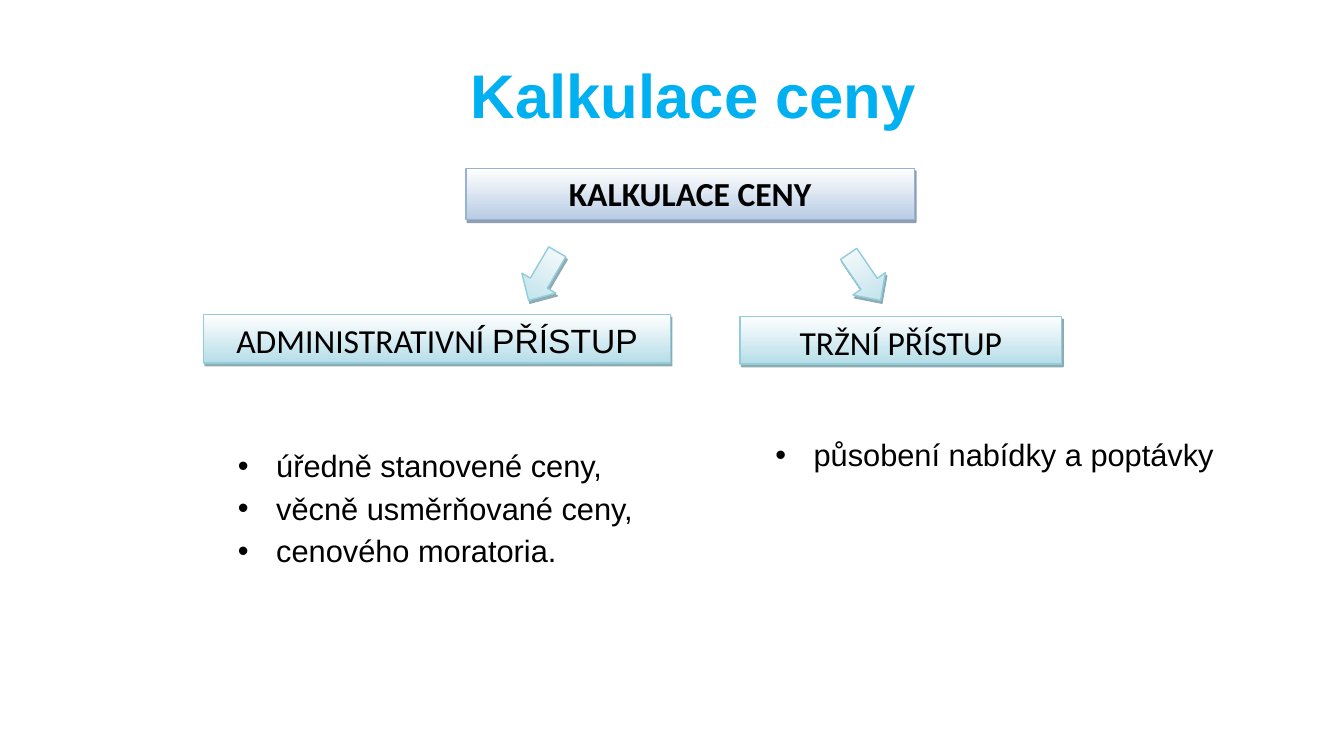
from lxml import etree
from pptx import Presentation
from pptx.dml.color import RGBColor
from pptx.enum.shapes import MSO_SHAPE
from pptx.enum.text import MSO_ANCHOR, MSO_AUTO_SIZE, PP_ALIGN
from pptx.oxml.ns import qn
from pptx.util import Inches, Pt

COLORS = {"title": "00B0F0", "text": "000000", "top": "FFFFFF"}
BLUE = {"bottom": "B8CCE4", "line": "95B3D7", "shadow": "243F60"}
TEAL = {"bottom": "B6DDE8", "line": "92CDDC", "shadow": "205867"}

TITLE_FONT = {"name": "Arial", "size": Pt(44), "bold": True}
LIST_FONT = {"name": "Arial", "size": Pt(22), "bold": False}
BOX_FONT = {"name": "Calibri", "size": Pt(24), "bold": False}


def rgb(value):
    return RGBColor.from_string(value)


def set_font(font, values, color="text"):
    for name, value in values.items():
        setattr(font, name, value)
    font.color.rgb = rgb(COLORS[color])


def place(shape, bounds):
    for name, value in zip(("left", "top", "width", "height"), bounds):
        setattr(shape, name, Inches(value))


def set_title(slide, text, bounds):
    title = slide.shapes.title
    place(title, bounds)
    frame = title.text_frame
    frame.word_wrap = True
    frame.vertical_anchor = MSO_ANCHOR.MIDDLE
    frame.text = text
    paragraph = frame.paragraphs[0]
    paragraph.alignment = PP_ALIGN.LEFT
    paragraph.line_spacing = 0.9
    set_font(paragraph.runs[0].font, TITLE_FONT, "title")


def fill_list(placeholder, items, bounds):
    place(placeholder, bounds)
    frame = placeholder.text_frame
    frame.word_wrap = True
    frame.auto_size = MSO_AUTO_SIZE.SHAPE_TO_FIT_TEXT
    frame.text = "\n".join(items)
    for paragraph in frame.paragraphs:
        properties = paragraph._p.get_or_add_pPr()
        properties.set("marL", str(Inches(0.38)))
        properties.set("indent", str(-Inches(0.38)))
        paragraph.line_spacing = 1.15
        paragraph.space_before = Pt(0)
        set_font(paragraph.runs[0].font, LIST_FONT)


def add_shaded_shape(slide, kind, bounds, palette):
    """Add a shape with a vertical gradient, a thin line and a hard shadow."""
    shape = slide.shapes.add_shape(kind, *map(Inches, bounds))
    shape.fill.gradient()
    shape.fill.gradient_angle = 270
    stops = shape.fill.gradient_stops
    for stop, position, color in zip(stops, (0, 1), (COLORS["top"], palette["bottom"])):
        stop.position = position
        stop.color.rgb = rgb(color)
    shape.line.color.rgb = rgb(palette["line"])
    shape.line.width = Pt(1)
    shape.shadow.inherit = False
    effects = shape._element.spPr.find(qn("a:effectLst"))
    shadow = etree.SubElement(effects, qn("a:outerShdw"), blurRad="0", dist=str(Pt(2.2)),
                              dir=str(63 * 60000), algn="ctr", rotWithShape="0")
    color = etree.SubElement(shadow, qn("a:srgbClr"), val=palette["shadow"])
    etree.SubElement(color, qn("a:alpha"), val="50000")
    return shape


def add_box(slide, runs, bounds, palette):
    box = add_shaded_shape(slide, MSO_SHAPE.RECTANGLE, bounds, palette)
    frame = box.text_frame
    frame.word_wrap = True
    frame.vertical_anchor = MSO_ANCHOR.TOP
    paragraph = frame.paragraphs[0]
    paragraph.alignment = PP_ALIGN.CENTER
    for text, changes in runs:
        run = paragraph.add_run()
        run.text = text
        set_font(run.font, {**BOX_FONT, **changes})


def add_arrow(slide, left, top, rotation):
    arrow = add_shaded_shape(slide, MSO_SHAPE.DOWN_ARROW, (left, top, 0.39, 0.56), TEAL)
    arrow.adjustments[1] = 0.51
    arrow.rotation = rotation


def main():
    presentation = Presentation()
    presentation.slide_width = Inches(13.33)
    presentation.slide_height = Inches(7.5)
    slide = presentation.slides.add_slide(presentation.slide_layouts.get_by_name("Two Content"))

    set_title(slide, "Kalkulace ceny", (4.57, 0.57, 4.77, 0.81))
    administrative, market = slide.placeholders[1], slide.placeholders[2]
    fill_list(administrative,
              ["úředně stanovené ceny,", "věcně usměrňované ceny,", "cenového moratoria."],
              (2.26, 4.33, 4.22, 1.34))
    administrative.text_frame.paragraphs[-1].space_after = Pt(10)
    fill_list(market, ["působení nabídky a poptávky"], (7.59, 4.22, 5.42, 0.49))

    add_box(slide, [("TRŽNÍ PŘÍSTUP", {})], (7.34, 3.14, 3.19, 0.47), TEAL)
    add_box(slide, [("KALKULACE CENY", {"bold": True})], (4.62, 1.67, 4.45, 0.51), BLUE)
    add_box(slide, [("ADMINISTRATIVNÍ ", {}), ("PŘÍSTUP", {"name": "Arial"})],
            (2.02, 3.12, 4.63, 0.48), TEAL)
    add_arrow(slide, 5.19, 2.46, 30.5)
    add_arrow(slide, 8.38, 2.47, 325.6)

    presentation.save("out.pptx")


if __name__ == "__main__":
    main()
